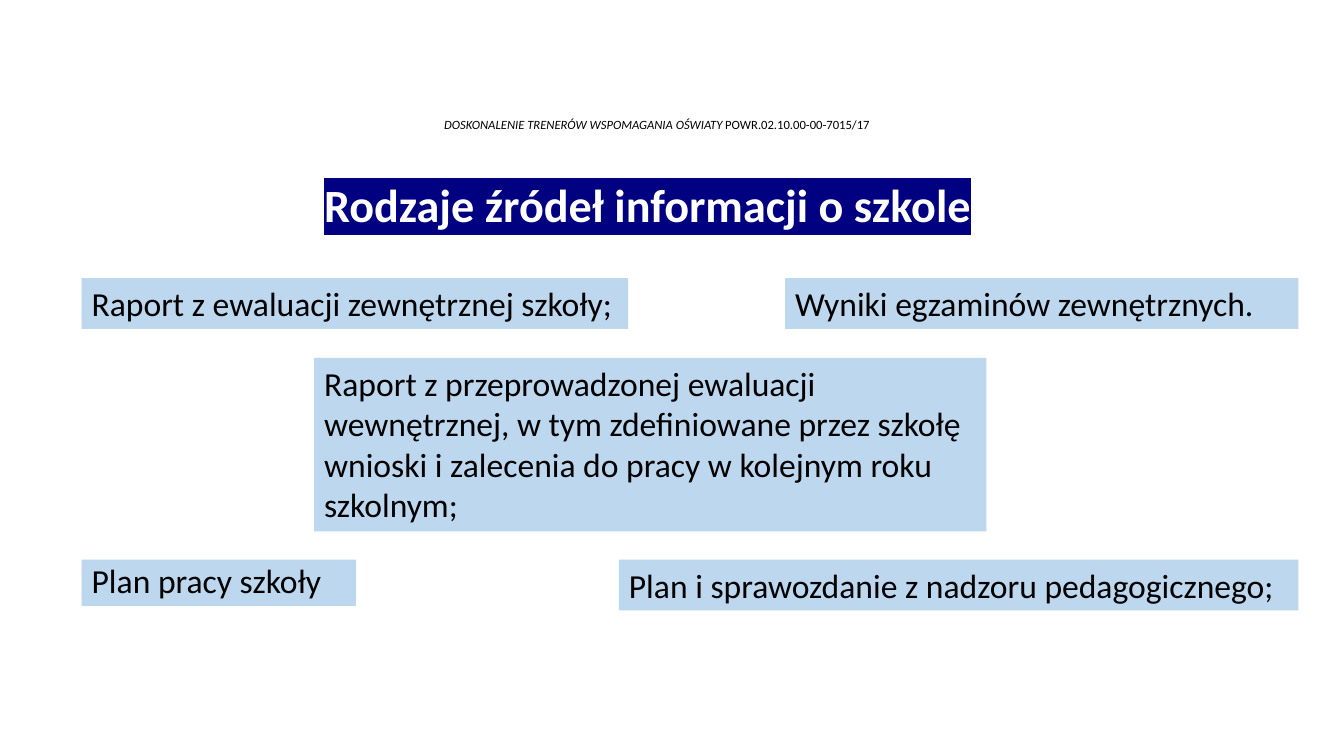
from dataclasses import dataclass

from lxml.etree import SubElement
from pptx import Presentation
from pptx.dml.color import RGBColor
from pptx.enum.shapes import MSO_SHAPE
from pptx.enum.text import MSO_ANCHOR as Anchor, MSO_AUTO_SIZE as AutoSize, PP_ALIGN as Align
from pptx.oxml.ns import qn
from pptx.util import Cm, Pt


@dataclass(frozen=True)
class Theme:
    font: str = "Calibri"
    ink: str = "000000"
    white: str = "FFFFFF"
    navy: str = "000080"
    pale_blue: str = "BDD7EE"
    header_size: float = 9
    title_size: float = 33
    body_size: float = 24


THEME = Theme()
LEFT, RIGHT = 2.06, 32.72
TOP_ROW, MIDDLE_ROW, BOTTOM_ROW = 7.01, 9.02, 14.1
TITLE_LEFT = 7.92
LINE_HEIGHT = 1.28


def style(p, size, color, bold=None, spacing=None):
    p.font.name = THEME.font
    p.font.size = Pt(size)
    p.font.color.rgb = RGBColor.from_string(color)
    p.font.bold = bold
    p.line_spacing = spacing


def add_text_box(s, left, top, width, height, anchor):
    tf = s.shapes.add_textbox(Cm(left), Cm(top), Cm(width), Cm(height)).text_frame
    tf.word_wrap = True
    tf.vertical_anchor = anchor
    return tf


def highlight(r, color):
    mark = SubElement(r._r.get_or_add_rPr(), qn("a:highlight"))
    SubElement(mark, qn("a:srgbClr"), val=color)


def add_header(s, project, number):
    tf = add_text_box(s, 2, 1.17, 29.11, 3.1, Anchor.BOTTOM)
    tf.margin_bottom = Cm(0.94)
    p = tf.paragraphs[0]
    p.alignment = Align.CENTER
    style(p, THEME.header_size, THEME.ink, spacing=0.9)
    r = p.add_run()
    r.text = project + " "
    r.font.italic = True
    p.add_run().text = number


def add_title(s, text):
    tf = add_text_box(s, TITLE_LEFT, 3.94, 18.36, 2.57, Anchor.MIDDLE)
    p = tf.paragraphs[0]
    style(p, THEME.title_size, THEME.white, bold=True, spacing=0.9)
    r = p.add_run()
    r.text = text
    highlight(r, THEME.navy)


def add_source(s, text, left, top, width, height=LINE_HEIGHT, spacing=None):
    sp = s.shapes.add_shape(MSO_SHAPE.RECTANGLE, Cm(left), Cm(top), Cm(width), Cm(height))
    sp.shadow.inherit = False
    sp.fill.solid()
    sp.fill.fore_color.rgb = RGBColor.from_string(THEME.pale_blue)
    sp.line.fill.background()
    tf = sp.text_frame
    tf.word_wrap = True
    tf.auto_size = AutoSize.SHAPE_TO_FIT_TEXT
    tf.vertical_anchor = Anchor.TOP
    p = tf.paragraphs[0]
    p.text = text
    p.alignment = Align.LEFT
    style(p, THEME.body_size, THEME.ink, spacing=spacing)


def add_right_source(s, text, top, width):
    add_source(s, text, RIGHT - width, top, width)


def main():
    prs = Presentation()
    prs.slide_width, prs.slide_height = Cm(33.87), Cm(19.05)
    s = prs.slides.add_slide(prs.slide_layouts[6])

    add_header(s, "DOSKONALENIE TRENERÓW WSPOMAGANIA OŚWIATY", "POWR.02.10.00-00-7015/17")
    add_title(s, "Rodzaje źródeł informacji o szkole")
    add_source(s, "Raport z ewaluacji zewnętrznej szkoły;", LEFT, TOP_ROW, 13.77)
    add_right_source(s, "Wyniki egzaminów zewnętrznych.", TOP_ROW, 12.93)
    add_source(s, "Raport z przeprowadzonej ewaluacji wewnętrznej, w tym zdefiniowane przez szkołę "
                  "wnioski i zalecenia do pracy w kolejnym roku szkolnym;",
               TITLE_LEFT, MIDDLE_ROW, 16.94, height=4.37)
    add_source(s, "Plan pracy szkoły", LEFT, BOTTOM_ROW, 6.91, height=1.17, spacing=0.9)
    add_right_source(s, "Plan i sprawozdanie z nadzoru pedagogicznego;", BOTTOM_ROW, 17.12)

    prs.save("out.pptx")


if __name__ == "__main__":
    main()
